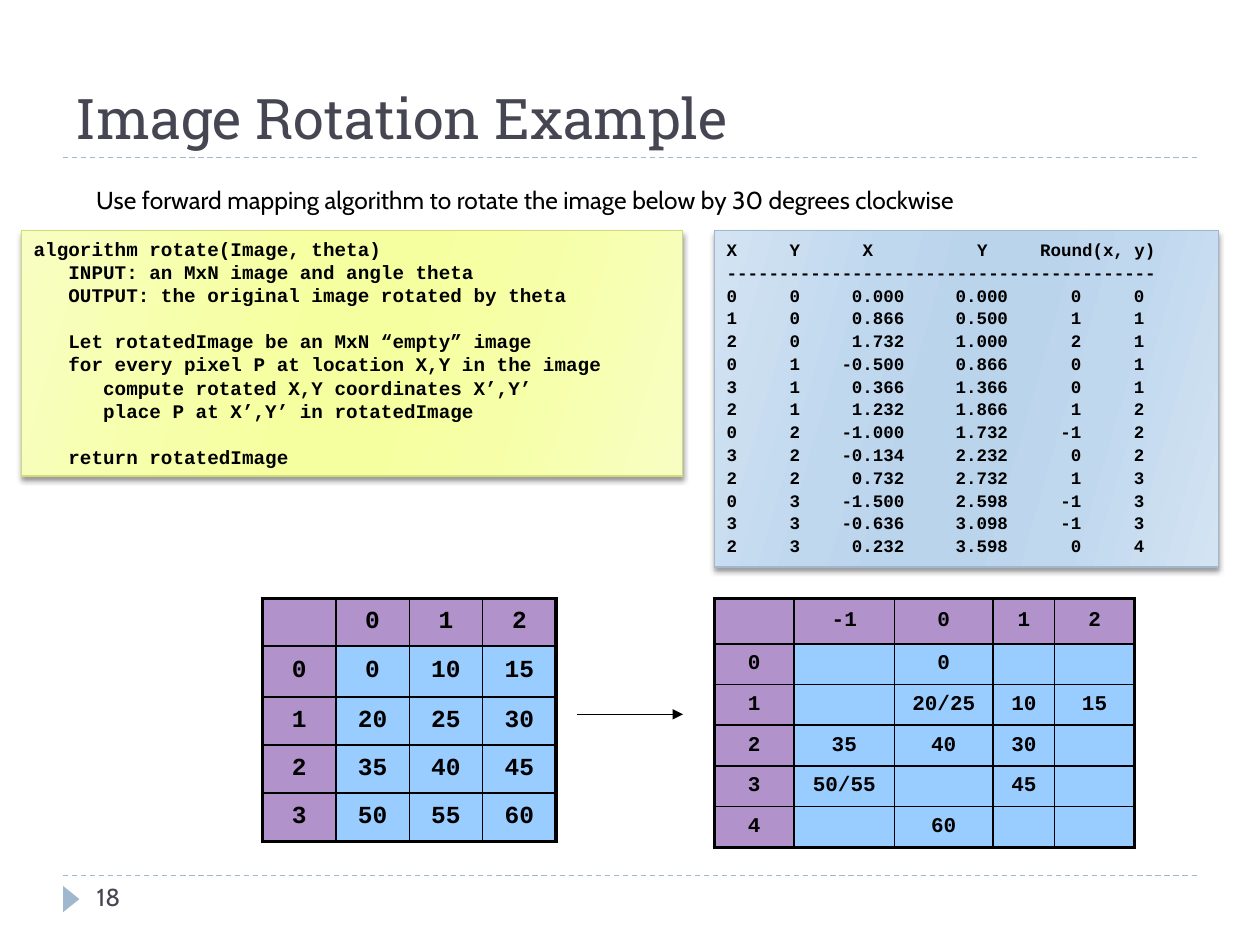
from dataclasses import dataclass

from lxml.etree import SubElement
from pptx import Presentation
from pptx.dml.color import RGBColor
from pptx.enum.dml import MSO_LINE
from pptx.enum.shapes import MSO_CONNECTOR, MSO_SHAPE
from pptx.enum.text import MSO_ANCHOR, PP_ALIGN
from pptx.oxml import parse_xml
from pptx.oxml.ns import nsdecls, qn
from pptx.util import Cm, Pt


@dataclass(frozen=True)
class Theme:
    heading_font: str = "Roboto Slab"
    body_font: str = "Cabin"
    code_font: str = "Courier New"
    slate: str = "464653"
    steel: str = "9FB8CD"
    black: str = "000000"
    header_fill: str = "B292CA"
    cell_fill: str = "99CCFF"
    lime_line: str = "D2DA7A"
    lime: tuple = ("F8FEC2", "F6FFA7", "F6FF9F")
    sky: tuple = ("D3E3F2", "C0D8EE", "BAD4EC")
    title_size: float = 32
    body_size: float = 14
    code_size: float = 11
    listing_size: float = 10
    small_grid_size: float = 12
    thin: float = 0.75
    inner_border: float = 1
    outer_border: float = 2.25


class SlideBuilder:
    def __init__(self, page, theme):
        self.page = page
        self.theme = theme

    def style(self, para, font, size, color, bold=False):
        para.font.name = font
        para.font.size = Pt(size)
        para.font.bold = bold
        para.font.color.rgb = RGBColor.from_string(color)

    def title(self, text, left, top, width, height):
        box = self.page.shapes.title
        box.left, box.top, box.width, box.height = map(Cm, (left, top, width, height))
        frame = box.text_frame
        frame.text = text
        frame.vertical_anchor = MSO_ANCHOR.BOTTOM
        para = frame.paragraphs[0]
        para.alignment = PP_ALIGN.LEFT
        self.style(para, self.theme.heading_font, self.theme.title_size, self.theme.slate)

    def text(self, text, left, top, width, height, color, align=PP_ALIGN.LEFT):
        box = self.page.shapes.add_textbox(Cm(left), Cm(top), Cm(width), Cm(height))
        box.text_frame.word_wrap = True
        para = box.text_frame.paragraphs[0]
        para.text = text
        para.alignment = align
        self.style(para, self.theme.body_font, self.theme.body_size, color)

    def line(self, left, top, right, color, dashed=False, arrow=False):
        line = self.page.shapes.add_connector(
            MSO_CONNECTOR.STRAIGHT, Cm(left), Cm(top), Cm(right), Cm(top))
        line.line.color.rgb = RGBColor.from_string(color)
        line.line.width = Pt(self.theme.thin)
        if dashed:
            line.line.dash_style = MSO_LINE.DASH
        if arrow:
            SubElement(line.line._get_or_add_ln(), qn("a:tailEnd"), type="triangle")
        SubElement(line._element.spPr, qn("a:effectLst"))

    def marker(self, left, top, width, height):
        marker = self.page.shapes.add_shape(
            MSO_SHAPE.ISOSCELES_TRIANGLE, Cm(left), Cm(top), Cm(width), Cm(height))
        marker.rotation = 90
        marker.shadow.inherit = False
        marker.fill.solid()
        marker.fill.fore_color.rgb = RGBColor.from_string(self.theme.steel)
        marker.line.fill.background()

    def panel(self, left, top, width, height, shades, border, inset_top=0.13):
        """Gradient box with a soft drop shadow; returns its text frame."""
        box = self.page.shapes.add_shape(
            MSO_SHAPE.RECTANGLE, Cm(left), Cm(top), Cm(width), Cm(height))
        box.line.color.rgb = RGBColor.from_string(border)
        box.line.width = Pt(self.theme.thin)
        edge, middle, core = shades
        stops = zip((0, 30, 45, 55, 73, 100), (edge, middle, core, core, middle, edge))
        marks = "".join(f'<a:gs pos="{place * 1000}"><a:srgbClr val="{color}"/></a:gs>'
                        for place, color in stops)
        properties = box._element.spPr
        properties.find(qn("a:prstGeom")).addnext(parse_xml(
            f'<a:gradFill {nsdecls("a")} rotWithShape="1"><a:gsLst>{marks}</a:gsLst>'
            '<a:lin ang="960000" scaled="0"/></a:gradFill>'))
        properties.append(parse_xml(
            f'<a:effectLst {nsdecls("a")}><a:outerShdw blurRad="{Pt(3)}" dist="{Pt(2)}" '
            'dir="5400000" rotWithShape="0"><a:srgbClr val="000000"><a:alpha val="40000"/>'
            '</a:srgbClr></a:outerShdw></a:effectLst>'))
        frame = box.text_frame
        frame.word_wrap = True
        frame.vertical_anchor = MSO_ANCHOR.TOP
        frame.margin_top = Cm(inset_top)
        return frame

    def code_lines(self, frame, lines, size, gap=0, tabs=None):
        """Add one paragraph per line; an empty line becomes space before the next."""
        skipped = 0
        first = True
        for index, line in enumerate(lines):
            if not line:
                skipped = size * 1.2
                continue
            para = frame.paragraphs[0] if first else frame.add_paragraph()
            para.text = line
            para.alignment = PP_ALIGN.LEFT
            if not first:
                para.space_before = Pt(gap + skipped)
            if tabs:
                stops = SubElement(para._p.get_or_add_pPr(), qn("a:tabLst"))
                for place, align in tabs[min(index, len(tabs) - 1)]:
                    SubElement(stops, qn("a:tab"), pos=str(Cm(place)), algn=align)
            self.style(para, self.theme.code_font, size, self.theme.black, bold=True)
            skipped, first = 0, False

    def border(self, cell, sides):
        properties = cell._tc.get_or_add_tcPr()
        for index, (side, outer) in enumerate(sides):
            width = self.theme.outer_border if outer else self.theme.inner_border
            properties.insert(index, parse_xml(
                f'<a:ln{side} {nsdecls("a")} w="{Pt(width)}"><a:solidFill>'
                f'<a:srgbClr val="{self.theme.black}"/></a:solidFill></a:ln{side}>'))

    def grid(self, left, top, widths, heights, rows, size):
        """Pixel grid whose first row and column are headers."""
        table = self.page.shapes.add_table(
            len(rows), len(widths), Cm(left), Cm(top), Cm(sum(widths)), Cm(sum(heights))).table
        table.first_row = table.horz_banding = False
        for column, width in zip(table.columns, widths):
            column.width = Cm(width)
        for r, (values, height) in enumerate(zip(rows, heights)):
            table.rows[r].height = Cm(height)
            for c, value in enumerate(values):
                cell = table.cell(r, c)
                header = r == 0 or c == 0
                cell.fill.solid()
                cell.fill.fore_color.rgb = RGBColor.from_string(
                    self.theme.header_fill if header else self.theme.cell_fill)
                cell.vertical_anchor = MSO_ANCHOR.MIDDLE
                para = cell.text_frame.paragraphs[0]
                para.text = value
                para.alignment = PP_ALIGN.CENTER
                self.style(para, self.theme.code_font, size, self.theme.black, bold=True)
                self.border(cell, (("L", c == 0), ("R", c == len(widths) - 1),
                                   ("T", r == 0), ("B", r == len(rows) - 1)))


ALGORITHM = """algorithm rotate(Image, theta)
   INPUT: an MxN image and angle theta
   OUTPUT: the original image rotated by theta

   Let rotatedImage be an MxN “empty” image
   for every pixel P at location X,Y in the image
      compute rotated X,Y coordinates X’,Y’
      place P at X’,Y’ in rotatedImage

   return rotatedImage""".split("\n")

COORDINATES = """0 0 0.000 0.000 0 0
1 0 0.866 0.500 1 1
2 0 1.732 1.000 2 1
0 1 -0.500 0.866 0 1
3 1 0.366 1.366 0 1
2 1 1.232 1.866 1 2
0 2 -1.000 1.732 -1 2
3 2 -0.134 2.232 0 2
2 2 0.732 2.732 1 3
0 3 -1.500 2.598 -1 3
3 3 -0.636 3.098 -1 3
2 3 0.232 3.598 0 4""".split("\n")
HEADER_TABS = ((1.27, "l"), (2.95, "r"), (5.26, "r"), (8.64, "r"))
ROW_TABS = ((1.27, "l"), (3.58, "r"), (5.67, "r"), (7.15, "r"), (8.42, "r"))

SOURCE_PIXELS = [["", "0", "1", "2"], ["0", "0", "10", "15"], ["1", "20", "25", "30"],
                 ["2", "35", "40", "45"], ["3", "50", "55", "60"]]
ROTATED_PIXELS = [["", "-1", "0", "1", "2"], ["0", "", "0", "", ""],
                  ["1", "", "20/25", "10", "15"], ["2", "35", "40", "30", ""],
                  ["3", "50/55", "", "45", ""], ["4", "", "60", "", ""]]


def main():
    deck = Presentation()
    deck.slide_width, deck.slide_height = Cm(25.4), Cm(19.05)
    theme = Theme()
    slide = SlideBuilder(deck.slides.add_slide(deck.slide_layouts[5]), theme)

    # Rules, footer marker and page number
    for top in (17.65, 3.17):
        slide.line(1.27, top, 24.13, theme.steel, dashed=True)
    slide.marker(1.17, 17.96, 0.53, 0.33)
    slide.text("18", 1.7, 17.65, 5.5, 1.02, theme.slate)

    # Title and task
    slide.title("Image Rotation Example", 1.27, 0.43, 22.86, 2.74)
    slide.text("Use forward mapping algorithm to rotate the image below by 30 degrees clockwise",
               0.43, 3.61, 20.32, 1.27, theme.black, PP_ALIGN.CENTER)

    # Algorithm and computed coordinates
    code = slide.panel(0.43, 4.65, 13.33, 4.95, theme.lime, theme.lime_line)
    slide.code_lines(code, ALGORITHM, theme.code_size)
    listing = slide.panel(14.4, 4.65, 10.16, 6.78, theme.sky, theme.steel, inset_top=0.17)
    rows = ["X\tY\tX\tY\tRound(x, y)", "-" * 41]
    rows += ["\t".join(line.split()) for line in COORDINATES]
    slide.code_lines(listing, rows, theme.listing_size, 1, (HEADER_TABS, ROW_TABS))

    # Pixels before and after the rotation
    slide.grid(5.29, 12.07, [1.48] * 4, [0.95, 1.03] + [0.97] * 3, SOURCE_PIXELS, theme.body_size)
    slide.line(11.64, 14.4, 13.77, theme.black, arrow=True)
    slide.grid(14.4, 12.07, [1.61, 2.02, 1.99, 1.24, 1.61], [0.91] + [0.82] * 5,
               ROTATED_PIXELS, theme.small_grid_size)
    deck.save("out.pptx")


if __name__ == "__main__":
    main()
